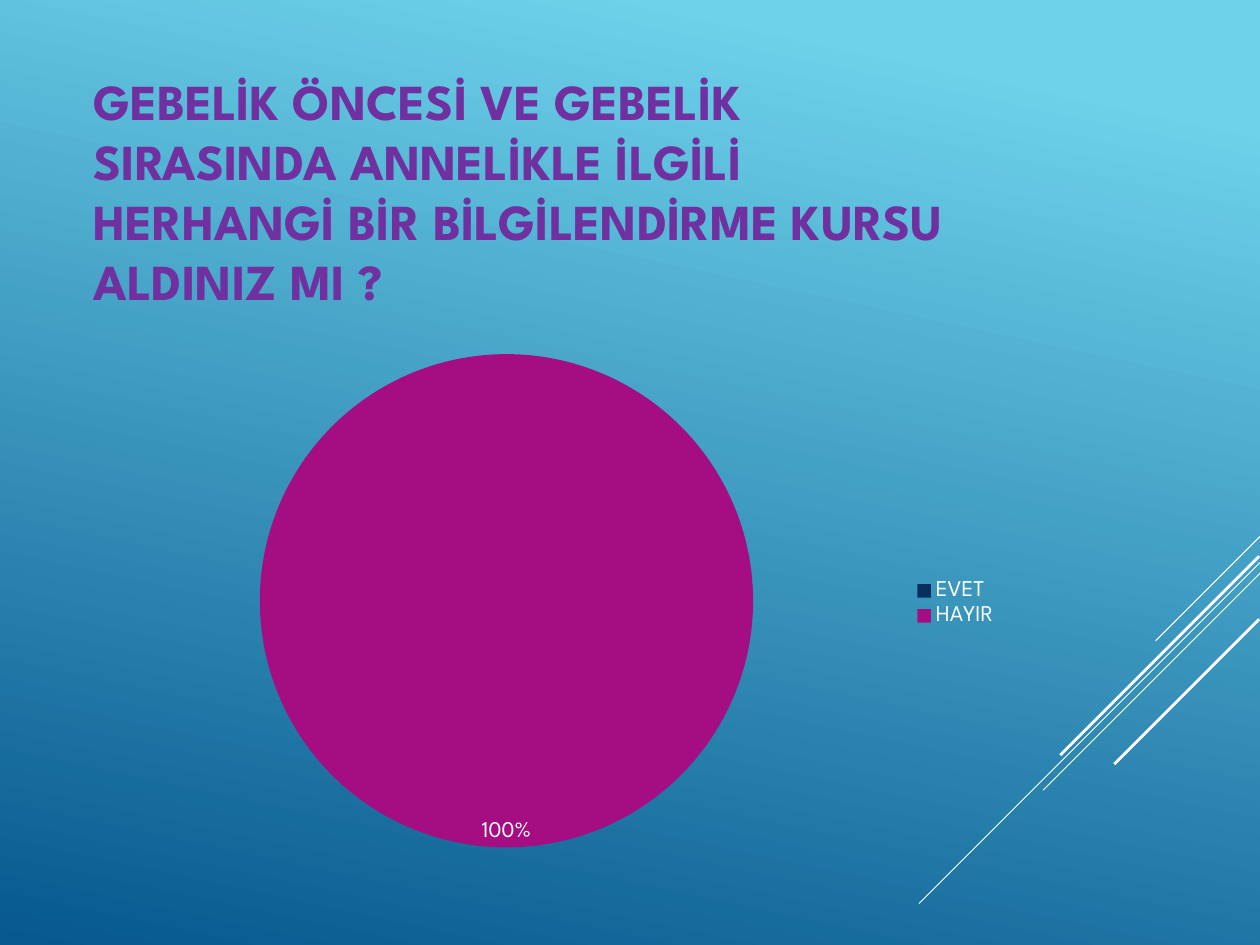
"""Builds a survey slide with a question, a pie chart and diagonal accent lines."""
from dataclasses import dataclass

from lxml.etree import SubElement
from pptx import Presentation
from pptx.chart.data import CategoryChartData
from pptx.dml.color import RGBColor as RGB
from pptx.enum.chart import XL_CHART_TYPE as Chart
from pptx.enum.chart import XL_LABEL_POSITION as LabelPos
from pptx.enum.chart import XL_LEGEND_POSITION as LegendPos
from pptx.enum.shapes import MSO_CONNECTOR as Conn
from pptx.enum.text import MSO_ANCHOR as Anchor
from pptx.oxml import parse_xml
from pptx.oxml.ns import nsdecls, qn
from pptx.util import Inches, Pt


@dataclass(frozen=True)
class Theme:
    font: str = "League Spartan"
    sky: str = "6ED2EB"
    deep: str = "06588E"
    title: str = "7030A0"
    white: str = "FFFFFF"
    yes: str = "052F61"
    no: str = "A50E82"
    title_size: float = 40.3
    title_leading: float = 48
    chart_size: float = 18


@dataclass(frozen=True)
class Box:
    left: float
    top: float
    width: float
    height: float

    def lengths(self):
        return [Inches(v) for v in (self.left, self.top, self.width, self.height)]


@dataclass(frozen=True)
class Accent:
    x: float
    y: float
    run: float
    weight: float


@dataclass(frozen=True)
class Answer:
    name: str
    value: int
    color: str


THEME = Theme()
ACCENTS = [
    Accent(14, 5.96, 1.16, 0.75),
    Accent(14, 6.25, 3.79, 0.75),
    Accent(14, 6.37, 2.41, 0.75),
    Accent(13.99, 6.18, 2.21, 2.25),
    Accent(13.99, 6.88, 1.61, 2.25),
]
ANSWERS = [Answer("EVET", 0, THEME.yes), Answer("HAYIR", 100, THEME.no)]
QUESTION = ("GEBELİK ÖNCESİ VE GEBELİK SIRASINDA ANNELİKLE İLGİLİ "
            "HERHANGİ BİR BİLGİLENDİRME KURSU ALDINIZ MI ?")


def set_background(s) -> None:
    fill = s.background.fill
    fill.gradient()
    fill.gradient_angle = 360 - 102
    for stop, position, color in zip(fill.gradient_stops, (0.1, 1), (THEME.sky, THEME.deep)):
        stop.position = position
        stop.color.rgb = RGB.from_string(color)


def add_accent(s, a: Accent) -> None:
    ends = (a.x, a.y, a.x - a.run, a.y + a.run)
    sp = s.shapes.add_connector(Conn.STRAIGHT, *[Inches(v) for v in ends])
    sp.line.color.rgb = RGB.from_string(THEME.white)
    sp.line.width = Pt(a.weight)
    SubElement(sp._element.spPr, qn("a:effectLst"))


def set_font(font, size: float, color: str, bold: bool = False) -> None:
    font.name, font.size, font.bold = THEME.font, Pt(size), bold
    font.color.rgb = RGB.from_string(color)


def add_text(s, box: Box, text: str, *, size: float, color: str, bold: bool = False,
             leading: float, anchor=Anchor.MIDDLE) -> None:
    tf = s.shapes.add_textbox(*box.lengths()).text_frame
    tf.word_wrap = True
    tf.vertical_anchor = anchor
    p = tf.paragraphs[0]
    p.line_spacing = Pt(leading)
    r = p.add_run()
    r.text = text
    set_font(r.font, size, color, bold)


def set_plot_area(chart, area: Box) -> None:
    plot_area = chart._chartSpace.chart.plotArea
    for old in plot_area.findall(qn("c:layout")):
        plot_area.remove(old)
    plot_area.insert(0, parse_xml(
        f'<c:layout {nsdecls("c")}><c:manualLayout><c:layoutTarget val="inner"/>'
        '<c:xMode val="edge"/><c:yMode val="edge"/>'
        f'<c:x val="{area.left}"/><c:y val="{area.top}"/>'
        f'<c:w val="{area.width}"/><c:h val="{area.height}"/>'
        '</c:manualLayout></c:layout>'))


def add_pie(s, box: Box, area: Box, answers: list[Answer]) -> None:
    data = CategoryChartData()
    data.categories = [a.name for a in answers]
    data.add_series("Series 1", [a.value for a in answers])
    chart = s.shapes.add_chart(Chart.PIE, *box.lengths(), data).chart
    set_font(chart.font, THEME.chart_size, THEME.white)
    chart.has_title = False
    chart.has_legend = True
    chart.legend.position = LegendPos.RIGHT
    chart.legend.include_in_layout = False
    set_plot_area(chart, area)
    plot = chart.plots[0]
    plot.vary_by_categories = True
    for i, a in enumerate(answers):
        fmt = plot.series[0].points[i].format
        fmt.fill.solid()
        fmt.fill.fore_color.rgb = RGB.from_string(a.color)
        fmt.line.fill.background()
    labels = plot.series[0].data_labels
    labels.show_value = False
    labels.show_percentage = True
    labels.number_format = "0%;;"
    labels.number_format_is_linked = False
    labels.position = LabelPos.INSIDE_END
    set_font(labels.font, THEME.chart_size, THEME.white)


def main() -> None:
    prs = Presentation()
    prs.slide_width, prs.slide_height = Inches(14), Inches(10.5)
    s = prs.slides.add_slide(prs.slide_layouts[6])
    set_background(s)
    for accent in ACCENTS:
        add_accent(s, accent)
    add_text(s, Box(0.94, 0.95, 10.04, 2.33), QUESTION, size=THEME.title_size,
             color=THEME.title, bold=True, leading=THEME.title_leading)
    add_pie(s, Box(1.16, 3.82, 10.04, 5.77), Box(0.17, 0.02, 0.55, 0.95), ANSWERS)
    prs.save("out.pptx")


if __name__ == "__main__":
    main()
